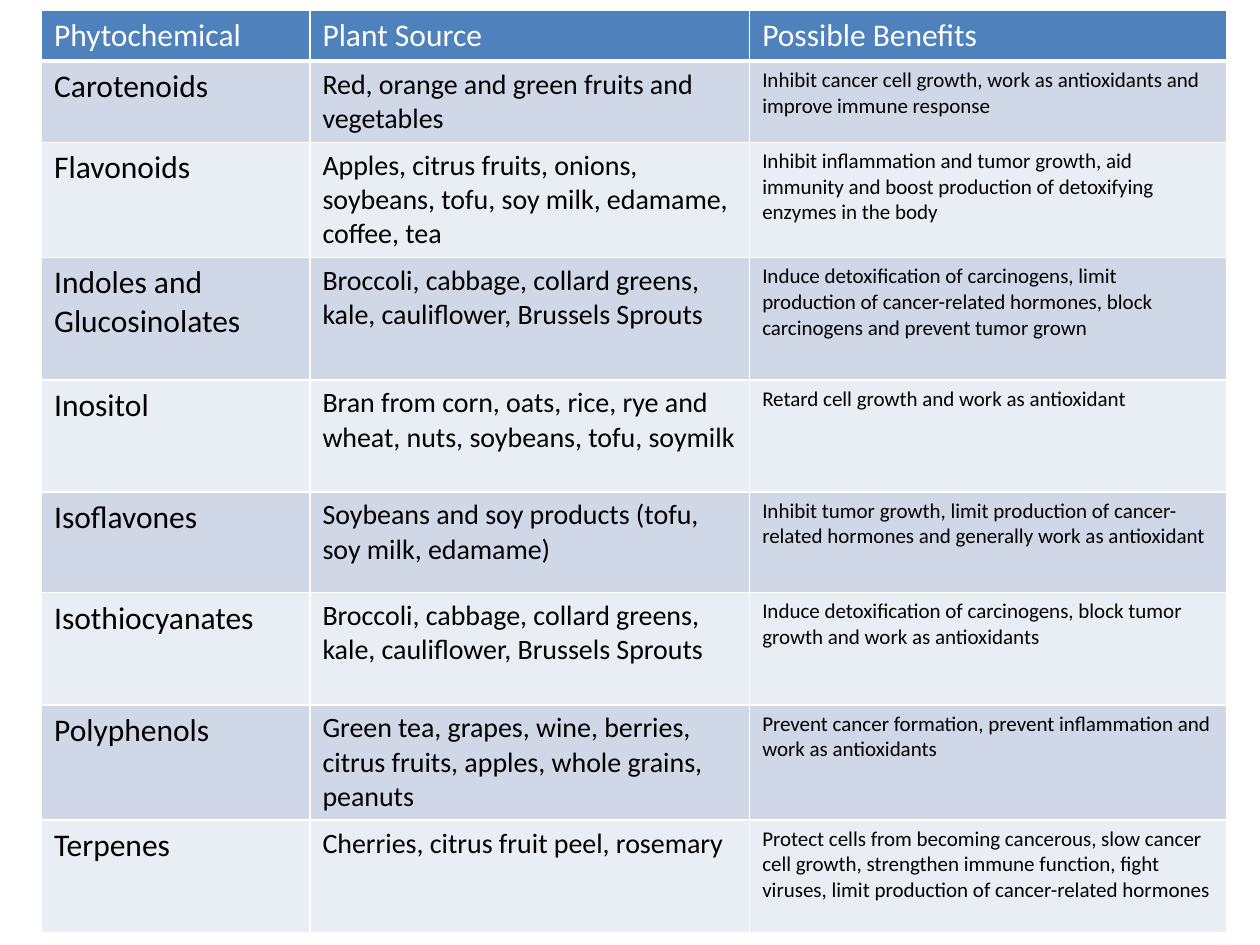
from dataclasses import dataclass

from lxml.etree import SubElement
from pptx import Presentation
from pptx.dml.color import RGBColor as RGB
from pptx.oxml.ns import qn
from pptx.util import Inches, Pt


@dataclass(frozen=True)
class Theme:
    font: str = "Calibri"
    header: str = "4F81BD"
    bands: tuple = ("D0D8E8", "E9EDF4")
    light: str = "FFFFFF"
    dark: str = "000000"
    header_size: int = 18
    body_sizes: tuple = (18, 16, 12)
    rule: float = 1
    header_rule: float = 3


THEME = Theme()
COLS = (2.13, 3.49, 3.79)
ROWS = (0.4, 0.63, 0.89, 0.97, 0.89, 0.8, 0.89, 0.89, 0.89)
HEADINGS = ("Phytochemical", "Plant Source", "Possible Benefits")
PHYTOCHEMICALS = (
    ("Carotenoids",
     "Red, orange and green fruits and vegetables",
     "Inhibit cancer cell growth, work as antioxidants and improve immune response"),
    ("Flavonoids",
     "Apples, citrus fruits, onions, soybeans, tofu, soy milk, edamame, coffee, tea",
     "Inhibit inflammation and tumor growth, aid immunity and boost production of "
     "detoxifying enzymes in the body"),
    ("Indoles and Glucosinolates",
     "Broccoli, cabbage, collard greens, kale, cauliflower, Brussels Sprouts",
     "Induce detoxification of carcinogens, limit production of cancer-related "
     "hormones, block carcinogens and prevent tumor grown"),
    ("Inositol",
     "Bran from corn, oats, rice, rye and wheat, nuts, soybeans, tofu, soymilk",
     "Retard cell growth and work as antioxidant"),
    ("Isoflavones",
     "Soybeans and soy products (tofu, soy milk, edamame)",
     "Inhibit tumor growth, limit production of cancer-related hormones and "
     "generally work as antioxidant"),
    ("Isothiocyanates",
     "Broccoli, cabbage, collard greens, kale, cauliflower, Brussels Sprouts",
     "Induce detoxification of carcinogens, block tumor growth and work as antioxidants"),
    ("Polyphenols",
     "Green tea, grapes, wine, berries, citrus fruits, apples, whole grains, peanuts",
     "Prevent cancer formation, prevent inflammation and work as antioxidants"),
    ("Terpenes",
     "Cherries, citrus fruit peel, rosemary",
     "Protect cells from becoming cancerous, slow cancer cell growth, strengthen "
     "immune function, fight viruses, limit production of cancer-related hormones"),
)


def set_borders(cell, bottom):
    tc_pr = cell._tc.get_or_add_tcPr()
    widths = {"a:lnL": THEME.rule, "a:lnR": THEME.rule, "a:lnT": THEME.rule, "a:lnB": bottom}
    for i, (tag, width) in enumerate(widths.items()):
        ln = SubElement(tc_pr, qn(tag), w=str(Pt(width)))
        fill = SubElement(ln, qn("a:solidFill"))
        SubElement(fill, qn("a:srgbClr"), val=THEME.light)
        tc_pr.insert(i, ln)


def fill_cell(cell, text, size, color, fill, bottom):
    cell.fill.solid()
    cell.fill.fore_color.rgb = RGB.from_string(fill)
    set_borders(cell, bottom)
    r = cell.text_frame.paragraphs[0].add_run()
    r.text = text
    r.font.name = THEME.font
    r.font.size = Pt(size)
    r.font.bold = False
    r.font.color.rgb = RGB.from_string(color)


def add_phytochemical_table(s, left, top, width, height):
    box = [Inches(v) for v in (left, top, width, height)]
    table = s.shapes.add_table(len(ROWS), len(COLS), *box).table
    for col, share in zip(table.columns, COLS):
        col.width = Inches(width * share / sum(COLS))
    for row, share in zip(table.rows, ROWS):
        row.height = Inches(height * share / sum(ROWS))
    for j, heading in enumerate(HEADINGS):
        fill_cell(table.cell(0, j), heading, THEME.header_size, THEME.light,
                  THEME.header, THEME.header_rule)
    for i, entry in enumerate(PHYTOCHEMICALS):
        band = THEME.bands[i % len(THEME.bands)]
        for j, (text, size) in enumerate(zip(entry, THEME.body_sizes)):
            fill_cell(table.cell(i + 1, j), text, size, THEME.dark, band, THEME.rule)


def main():
    prs = Presentation()
    prs.slide_width, prs.slide_height = Inches(10), Inches(7.5)
    s = prs.slides.add_slide(prs.slide_layouts[6])
    add_phytochemical_table(s, 0.33, 0.08, sum(COLS), sum(ROWS))
    prs.save("out.pptx")


if __name__ == "__main__":
    main()
